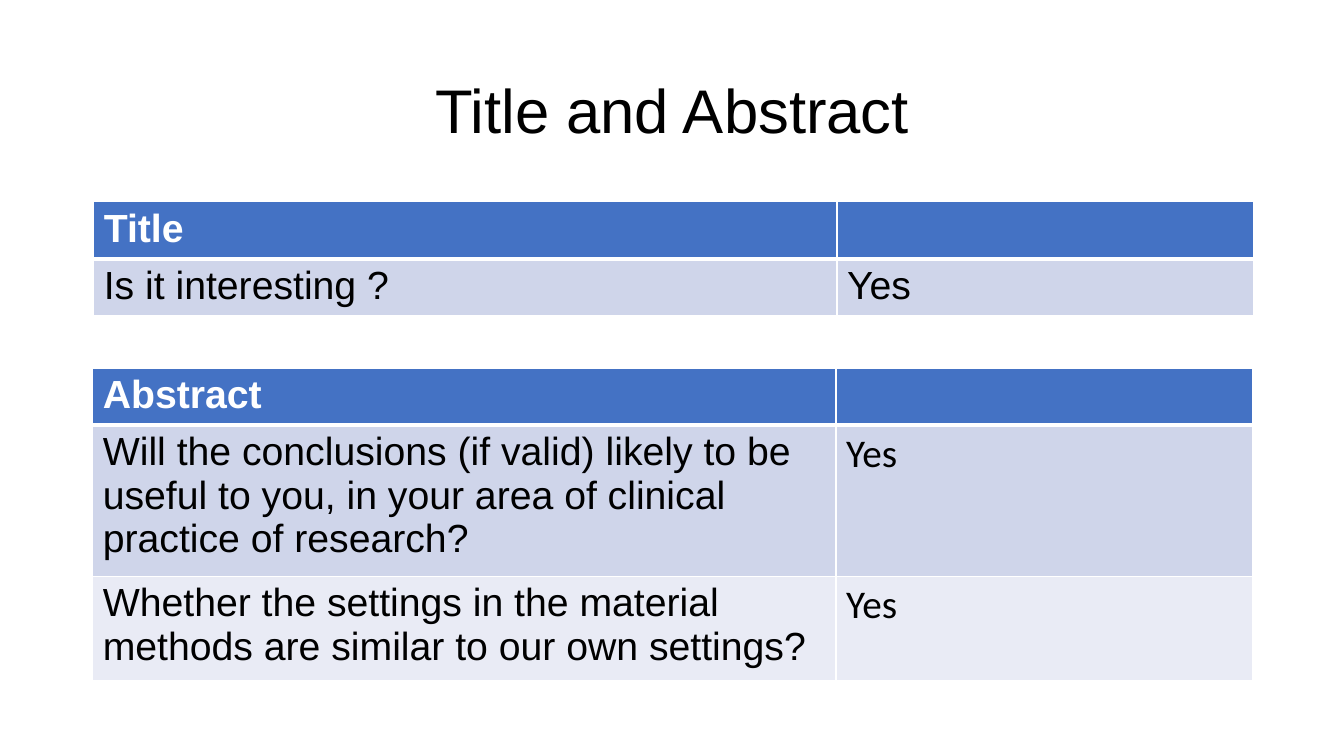
from dataclasses import dataclass

from lxml import etree
from pptx import Presentation
from pptx import util as u
from pptx.dml.color import RGBColor
from pptx.enum import text
from pptx.oxml import ns

BLACK = RGBColor(0x00, 0x00, 0x00)
WHITE = RGBColor(0xFF, 0xFF, 0xFF)
HEADER_BLUE = RGBColor(0x44, 0x72, 0xC4)
BANDS = (RGBColor(0xCF, 0xD5, 0xEA), RGBColor(0xE9, 0xEB, 0xF5))

SLIDE_WIDTH, SLIDE_HEIGHT = 13.33, 7.5
MARGIN = 0.92
CONTENT_WIDTH = 11.5
QUESTION_SHARE = 0.641
TEXT_SIZE = 28


@dataclass
class Checklist:
    heading: str
    left: float
    top: float
    row_heights: tuple[float, ...]
    answers: tuple[tuple[str, str], ...]
    answer_font: str


CHECKLISTS = (
    Checklist("Title", MARGIN + 0.01, 2.0, (0.53, 0.53),
              (("Is it interesting ?", "Yes"),), "Arial"),
    Checklist("Abstract", MARGIN, 3.65, (0.56, 1.41, 0.95),
              (("Will the conclusions (if valid) likely to be useful to you, "
                "in your area of clinical practice of research?", "Yes"),
               ("Whether the settings in the material methods are similar "
                "to our own settings?", "Yes")), "Calibri"),
)


def write(frame, words: str, *, size: float = TEXT_SIZE, font: str = "Arial",
          color: RGBColor = BLACK, bold: bool = False,
          align=None, spacing: float | None = None) -> None:
    """Write one formatted paragraph; an empty one keeps its size and font."""
    paragraph = frame.paragraphs[0]
    paragraph.alignment = align
    paragraph.line_spacing = spacing
    if words:
        run = paragraph.add_run()
        run.text = words
        run.font.size = u.Pt(size)
        run.font.name = font
        run.font.bold = bold
        run.font.color.rgb = color
    else:
        end = etree.SubElement(paragraph._p, ns.qn("a:endParaRPr"), sz=str(size * 100))
        etree.SubElement(end, ns.qn("a:latin"), typeface=font)


def add_borders(cell, top: float, bottom: float) -> None:
    """Draw white cell borders, with widths in points."""
    properties = cell._tc.get_or_add_tcPr()
    sides = (("L", 1), ("R", 1), ("T", top), ("B", bottom))
    for index, (side, width) in enumerate(sides):
        line = etree.Element(ns.qn(f"a:ln{side}"), w=str(u.Pt(width)))
        fill = etree.SubElement(line, ns.qn("a:solidFill"))
        etree.SubElement(fill, ns.qn("a:srgbClr"), val=str(WHITE))
        properties.insert(index, line)


def add_checklist(slide, checklist: Checklist) -> None:
    rows = ((checklist.heading, ""), *checklist.answers)
    table = slide.shapes.add_table(
        len(rows), 2, u.Inches(checklist.left), u.Inches(checklist.top),
        u.Inches(CONTENT_WIDTH), u.Inches(sum(checklist.row_heights))).table
    for column, share in zip(table.columns, (QUESTION_SHARE, 1 - QUESTION_SHARE)):
        column.width = u.Inches(CONTENT_WIDTH * share)

    for r, (row, height) in enumerate(zip(rows, checklist.row_heights)):
        table.rows[r].height = u.Inches(height)
        header = r == 0
        for c, words in enumerate(row):
            cell = table.cell(r, c)
            cell.fill.solid()
            cell.fill.fore_color.rgb = HEADER_BLUE if header else BANDS[(r - 1) % 2]
            add_borders(cell, top=3 if r == 1 else 1, bottom=3 if header else 1)
            write(cell.text_frame, words, bold=header,
                  font=checklist.answer_font if c else "Arial",
                  color=WHITE if header else BLACK)


def main() -> None:
    presentation = Presentation()
    presentation.slide_width = u.Inches(SLIDE_WIDTH)
    presentation.slide_height = u.Inches(SLIDE_HEIGHT)
    slide = presentation.slides.add_slide(presentation.slide_layouts[6])

    # Heading
    title = slide.shapes.add_textbox(u.Inches(MARGIN), u.Inches(0.4),
                                     u.Inches(CONTENT_WIDTH), u.Inches(1.45))
    title.text_frame.word_wrap = True
    title.text_frame.vertical_anchor = text.MSO_ANCHOR.MIDDLE
    write(title.text_frame, "Title and Abstract", size=44,
          align=text.PP_ALIGN.CENTER, spacing=0.9)

    # Checklist tables
    for checklist in CHECKLISTS:
        add_checklist(slide, checklist)

    presentation.save("out.pptx")


if __name__ == "__main__":
    main()
